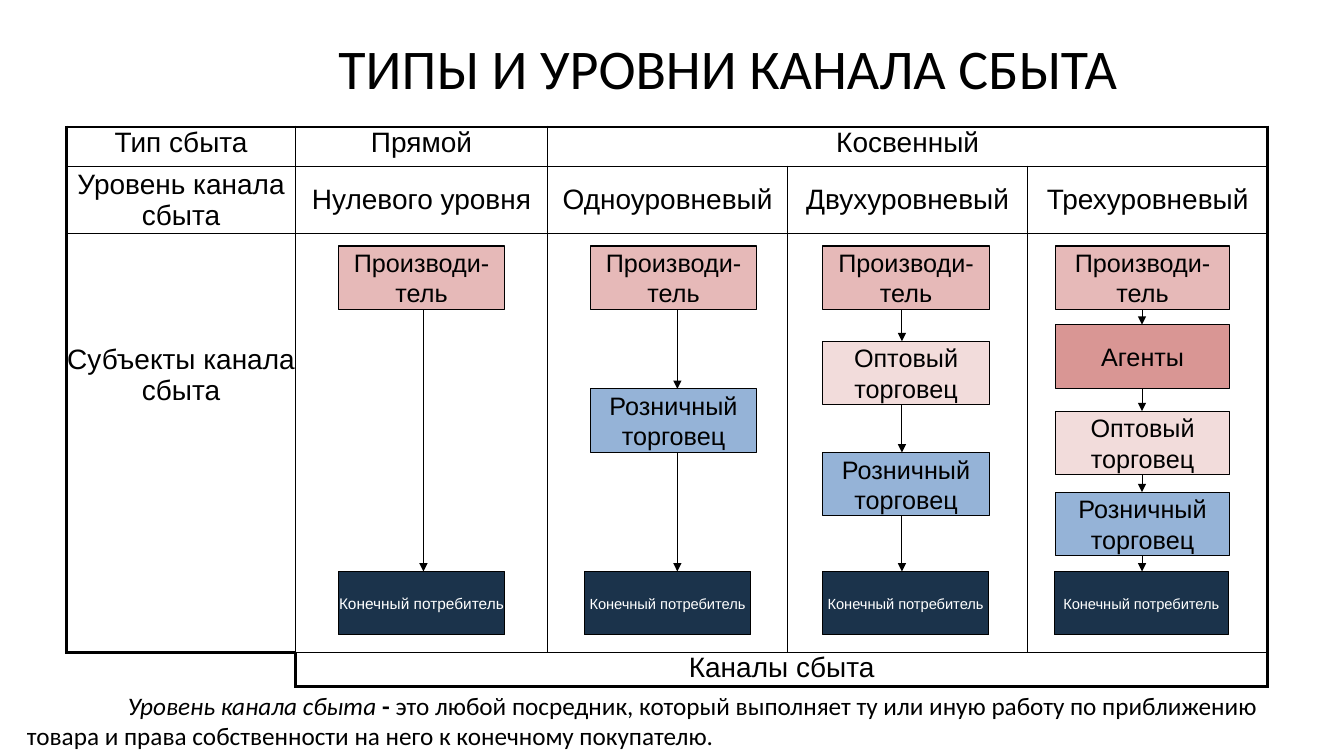
from dataclasses import dataclass
from itertools import pairwise

from lxml import etree
from pptx import Presentation
from pptx.dml.color import RGBColor
from pptx.enum.shapes import MSO_CONNECTOR, MSO_SHAPE
from pptx.enum.text import MSO_ANCHOR, PP_ALIGN
from pptx.oxml.ns import qn
from pptx.util import Cm, Pt

RECTANGLE = MSO_SHAPE.RECTANGLE
STRAIGHT = MSO_CONNECTOR.STRAIGHT
CENTER, LEFT = PP_ALIGN.CENTER, PP_ALIGN.LEFT
TOP, MIDDLE = MSO_ANCHOR.TOP, MSO_ANCHOR.MIDDLE
PLAIN_TABLE_STYLE = "{2D5ABB26-0587-4C30-8999-92F81FD0307C}"


@dataclass(frozen=True)
class Theme:
    diagram_font: str = "Arial"
    text_font: str = "Calibri"
    ink: str = "000000"
    light_ink: str = "FFFFFF"
    producer: str = "E6B9B8"
    agent: str = "D99694"
    wholesaler: str = "F2DCDB"
    retailer: str = "95B3D7"
    consumer: str = "1B334B"
    title_size: float = 40
    table_size: float = 20
    body_size: float = 18
    line_width: float = 0.75
    inner_border: float = 1
    outer_border: float = 2.25


THEME = Theme()
PRODUCER = ("Производи-\nтель", THEME.producer)
AGENT = ("Агенты", THEME.agent)
WHOLESALER = ("Оптовый\nторговец", THEME.wholesaler)
RETAILER = ("Розничный\nторговец", THEME.retailer)
CONSUMER = "Конечный потребитель"

BOX_HEIGHT = 1.6
PRODUCER_TOP, CONSUMER_TOP = 6.2, 14.4


@dataclass(frozen=True)
class Channel:
    left: float
    consumer_left: float
    width: float
    arrow_x: float
    consumer_size: float
    middlemen: tuple = ()


CHANNELS = (
    Channel(8.53, 8.53, 4.19, 10.67, 11),
    Channel(14.88, 14.73, 4.19, 17.07, 10.5, ((RETAILER, 9.8),)),
    Channel(20.74, 20.73, 4.19, 22.73, 10.5, ((WHOLESALER, 8.6), (RETAILER, 11.4))),
    Channel(26.6, 26.57, 4.39, 28.78, 10.5,
            ((AGENT, 8.18), (WHOLESALER, 10.36), (RETAILER, 12.4))),
)

COLUMN_WIDTHS = (5.77, 6.35, 6.05, 6.05, 6.05)
ROW_HEIGHTS = (0.99, 1.7, 10.55, 0.86)
TABLE_ROWS = (
    ("Тип сбыта", "Прямой", "Косвенный", "", ""),
    ("Уровень канала сбыта", "Нулевого уровня", "Одноуровневый",
     "Двухуровневый", "Трехуровневый"),
    ("Субъекты канала сбыта", "", "", "", ""),
    ("", "Каналы сбыта", "", "", ""),
)
SUBJECTS_MARGIN = 2.77


class SlideBuilder:
    def __init__(self, slide, theme):
        self.slide = slide
        self.theme = theme

    def style_text(self, text_frame, font, size, color, alignment):
        for paragraph in text_frame.paragraphs:
            paragraph.alignment = alignment
            for run in paragraph.runs:
                run.font.name = font
                run.font.size = Pt(size)
                run.font.color.rgb = RGBColor.from_string(color)

    def text_box(self, left, top, width, height, parts, size, indent=0):
        """Add one paragraph made of (text, bold, italic) parts."""
        box = self.slide.shapes.add_textbox(Cm(left), Cm(top), Cm(width), Cm(height))
        text_frame = box.text_frame
        text_frame.word_wrap = True
        paragraph = text_frame.paragraphs[0]
        for text, bold, italic in parts:
            run = paragraph.add_run()
            run.text = text
            run.font.bold = bold
            run.font.italic = italic
        self.style_text(text_frame, self.theme.text_font, size, self.theme.ink, LEFT)
        paragraph._p.get_or_add_pPr().set("indent", str(Cm(indent)))

    def box(self, left, top, width, text, fill, size, color):
        shape = self.slide.shapes.add_shape(
            RECTANGLE, Cm(left), Cm(top), Cm(width), Cm(BOX_HEIGHT))
        shape.shadow.inherit = False
        shape.fill.solid()
        shape.fill.fore_color.rgb = RGBColor.from_string(fill)
        shape.line.color.rgb = RGBColor.from_string(self.theme.ink)
        shape.line.width = Pt(self.theme.line_width)
        text_frame = shape.text_frame
        text_frame.text = text
        text_frame.word_wrap = False
        text_frame.vertical_anchor = MIDDLE
        text_frame.margin_left = text_frame.margin_right = 0
        text_frame.margin_top = text_frame.margin_bottom = 0
        self.style_text(text_frame, self.theme.diagram_font, size, color, CENTER)

    def down_arrow(self, x, top, bottom):
        arrow = self.slide.shapes.add_connector(
            STRAIGHT, Cm(x), Cm(top), Cm(x), Cm(bottom))
        arrow.line.color.rgb = RGBColor.from_string(self.theme.ink)
        arrow.line.width = Pt(self.theme.line_width)
        etree.SubElement(arrow.line._get_or_add_ln(), qn("a:tailEnd"), type="triangle")
        etree.SubElement(arrow._element.spPr, qn("a:effectLst"))

    def channel(self, channel):
        theme = self.theme
        stages = ((PRODUCER, PRODUCER_TOP), *channel.middlemen)
        for (text, fill), top in stages:
            self.box(channel.left, top, channel.width, text, fill,
                     theme.body_size, theme.ink)
        self.box(channel.consumer_left, CONSUMER_TOP, channel.width, CONSUMER,
                 theme.consumer, channel.consumer_size, theme.light_ink)
        tops = [top for _, top in stages] + [CONSUMER_TOP]
        for upper, lower in pairwise(tops):
            self.down_arrow(channel.arrow_x, upper + BOX_HEIGHT, lower)

    def cell_borders(self, cell, widths):
        """Draw left, right, top and bottom borders; a zero width hides one."""
        properties = cell._tc.get_or_add_tcPr()
        for side, width in zip("LRTB", widths):
            line = etree.SubElement(properties, qn(f"a:ln{side}"), w=str(Pt(width)))
            if width:
                fill = etree.SubElement(line, qn("a:solidFill"))
                etree.SubElement(fill, qn("a:srgbClr"), val=self.theme.ink)
            else:
                etree.SubElement(line, qn("a:noFill"))

    def border_widths(self, cell, row, column):
        inner, outer = self.theme.inner_border, self.theme.outer_border
        last_row, last_column = len(ROW_HEIGHTS) - 1, len(COLUMN_WIDTHS) - 1
        if row == last_row and column == 0:
            return 0, outer, outer, 0
        right_column = column if cell.is_spanned else column + cell.span_width - 1
        left = outer if column == 0 or (row == last_row and column == 1) else inner
        right = outer if right_column == last_column else inner
        if cell.is_spanned:
            left = 0
            right = outer if column == last_column else 0
        top = outer if row == 0 else inner
        closes_outline = row == last_row or (row == last_row - 1 and column == 0)
        return left, right, top, outer if closes_outline else inner

    def table(self, left, top):
        frame = self.slide.shapes.add_table(
            len(ROW_HEIGHTS), len(COLUMN_WIDTHS), Cm(left), Cm(top),
            Cm(sum(COLUMN_WIDTHS)), Cm(sum(ROW_HEIGHTS)))
        table = frame.table
        table.first_row = table.horz_banding = False
        next(frame._element.iter(qn("a:tableStyleId"))).text = PLAIN_TABLE_STYLE
        for column, width in zip(table.columns, COLUMN_WIDTHS):
            column.width = Cm(width)
        for row, height in zip(table.rows, ROW_HEIGHTS):
            row.height = Cm(height)
        table.cell(0, 2).merge(table.cell(0, 4))
        table.cell(3, 1).merge(table.cell(3, 4))
        for row, texts in enumerate(TABLE_ROWS):
            for column, text in enumerate(texts):
                cell = table.cell(row, column)
                cell.margin_left = cell.margin_right = 0
                cell.margin_bottom = 0
                cell.margin_top = Cm(SUBJECTS_MARGIN if row == 2 else 0)
                cell.vertical_anchor = MIDDLE if row == 1 else TOP
                self.cell_borders(cell, self.border_widths(cell, row, column))
                cell.fill.background()
                if text:
                    cell.text_frame.text = text
                    self.style_text(cell.text_frame, self.theme.diagram_font,
                                    self.theme.table_size, self.theme.ink, CENTER)


def main():
    presentation = Presentation()
    presentation.slide_width, presentation.slide_height = Cm(33.87), Cm(19.05)
    slide = presentation.slides.add_slide(presentation.slide_layouts[6])
    builder = SlideBuilder(slide, THEME)
    definition = (
        ("Уровень канала сбыта ", False, True),
        ("- ", True, False),
        ("это любой посредник, который выполняет ту или иную работу по приближению "
         "товара и права собственности на него к конечному покупателю.", False, False),
    )
    builder.text_box(0.43, 17.27, 32.79, 1.78, definition, THEME.body_size, indent=2.54)
    builder.table(1.68, 3.2)
    for channel in CHANNELS:
        builder.channel(channel)
    builder.text_box(8.28, 0.71, 25.45, 1.96,
                     (("ТИПЫ И УРОВНИ КАНАЛА СБЫТА", False, False),), THEME.title_size)
    presentation.save("out.pptx")


if __name__ == "__main__":
    main()
